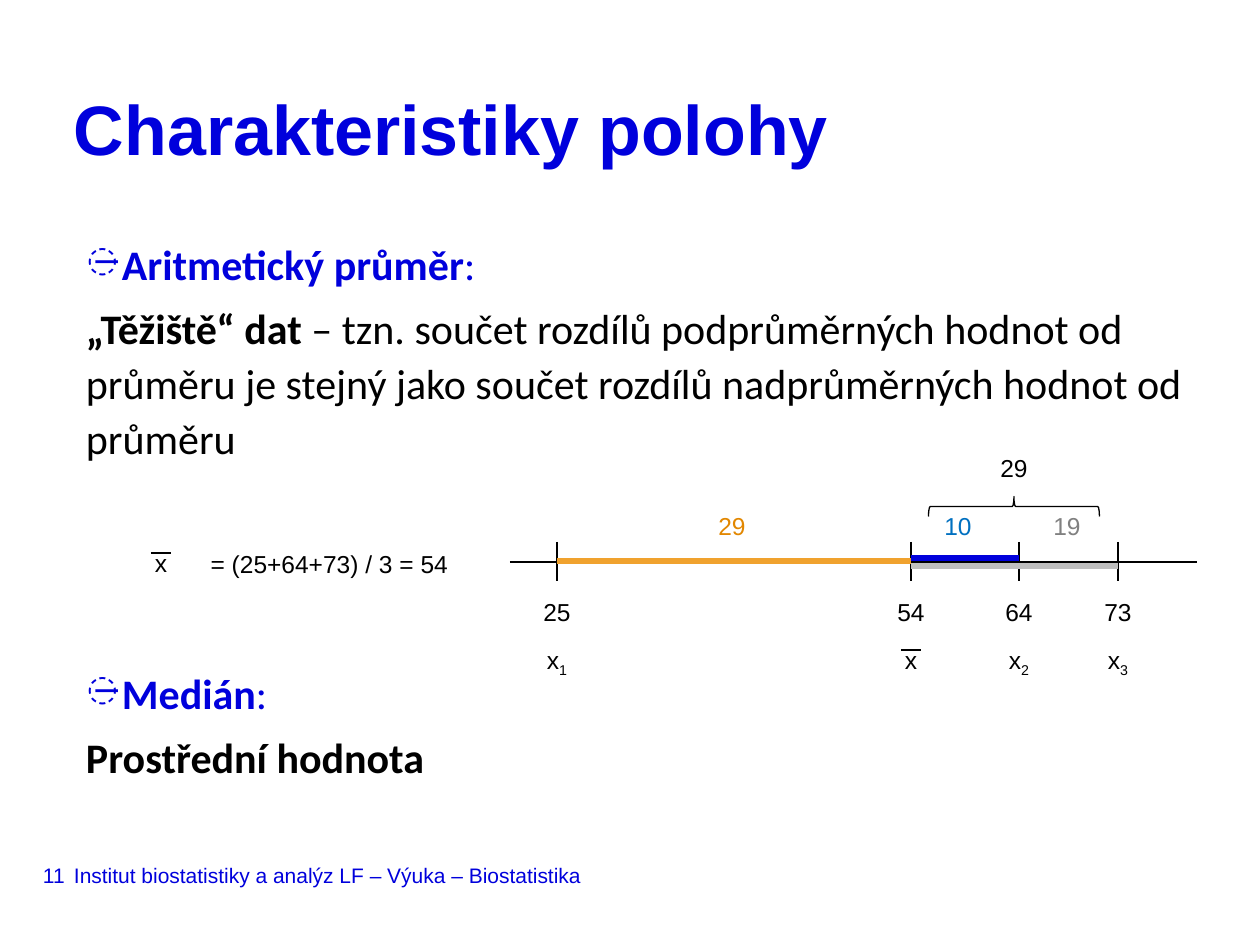
from dataclasses import dataclass

from lxml.etree import SubElement
from pptx import Presentation
from pptx.dml.color import RGBColor
from pptx.enum.shapes import MSO_CONNECTOR, MSO_SHAPE
from pptx.enum.text import MSO_ANCHOR, PP_ALIGN
from pptx.oxml.ns import qn
from pptx.util import Emu, Pt

PX = 914400 / 126
COLORS = {
    "blue": "0000DC", "black": "000000", "orange": "F0A22E", "dark_orange": "E28700",
    "gray": "808080", "light_gray": "BFBFBF", "sky": "0070C0",
}
AXIS_Y, TICK_TOP, TICK_BOTTOM = 562, 542, 581
VALUE_TOP, SYMBOL_TOP, DIFFERENCE_TOP = 591, 639, 505
LABEL_WIDTH, LABEL_HEIGHT = 60, 43


@dataclass
class Tick:
    x: int
    value: str
    index: str


@dataclass
class Label:
    text: str
    center: int
    top: int
    color: str = "black"
    subscript: str = ""
    width: int = LABEL_WIDTH


@dataclass
class Segment:
    start: int
    end: int
    y: int
    color: str


@dataclass
class Run:
    text: str
    color: str
    bold: bool = False


@dataclass
class Paragraph:
    runs: list[Run]
    bullet: bool = False


X1, MEAN, X2, X3 = (
    Tick(557, "25", "1"), Tick(911, "54", ""), Tick(1019, "64", "2"), Tick(1118, "73", "3"),
)
SEGMENTS = [
    Segment(X1.x, MEAN.x, 561, "orange"),
    Segment(MEAN.x, X3.x, 566, "light_gray"),
    Segment(MEAN.x, X2.x, 558, "blue"),
]
LABELS = [
    Label("29", 732, DIFFERENCE_TOP, "dark_orange"),
    Label("10", 958, DIFFERENCE_TOP, "sky"),
    Label("19", 1067, DIFFERENCE_TOP, "gray"),
    Label("29", 1014, 447),
    Label("= (25+64+73) / 3 = 54", 329, 543, width=263),
]
MEAN_TEXT = [
    Paragraph([Run("Aritmetický průměr", "blue", True), Run(":", "blue")], bullet=True),
    Paragraph([
        Run("„Těžiště“ dat ", "black", True),
        Run("– tzn. součet rozdílů podprůměrných hodnot od průměru je stejný "
            "jako součet rozdílů nadprůměrných hodnot od průměru", "black"),
    ]),
]
MEDIAN_TEXT = [
    Paragraph([Run("Medián", "blue", True), Run(":", "blue")], bullet=True),
    Paragraph([Run("Prostřední hodnota", "black", True)]),
]


def px(length: int) -> Emu:
    """Turn a length in px into EMU."""
    return Emu(round(length * PX))


def rgb(color: str) -> RGBColor:
    """Look up a named colour."""
    return RGBColor.from_string(COLORS[color])


def style(font, size: int, color: str, bold: bool = False, name: str = "Arial") -> None:
    """Set the look of a font."""
    font.name, font.size, font.bold = name, Pt(size), bold
    font.color.rgb = rgb(color)


def add_frame(slide, left: int, top: int, width: int, height: int, wrap: bool = True):
    """Add a text box without margins and return its text frame."""
    frame = slide.shapes.add_textbox(px(left), px(top), px(width), px(height)).text_frame
    frame.margin_left = frame.margin_top = frame.margin_right = frame.margin_bottom = 0
    frame.word_wrap = wrap
    return frame


def add_heading(slide) -> None:
    """Add the slide title."""
    frame = add_frame(slide, 74, 100, 1111, 62)
    frame.text = "Charakteristiky polohy"
    frame.paragraphs[0].line_spacing = Pt(40)
    style(frame.paragraphs[0].runs[0].font, 40, "blue", True)


def add_footer(slide, text: str, left: int, width: int, wrap: bool) -> None:
    """Add one part of the footer line."""
    frame = add_frame(slide, left, 858, width, 35, wrap)
    frame.vertical_anchor = MSO_ANCHOR.MIDDLE
    frame.text = text
    style(frame.paragraphs[0].runs[0].font, 12, "blue")


def indent(paragraph, bullet: bool) -> None:
    """Set the indents of a paragraph and its bullet."""
    properties = paragraph._p.get_or_add_pPr()
    properties.set("marL", str(px(48 if bullet else 12)))
    properties.set("indent", str(px(-35 if bullet else 0)))
    if bullet:
        color = SubElement(properties, qn("a:buClr"))
        SubElement(color, qn("a:srgbClr"), val=COLORS["blue"])
        SubElement(properties, qn("a:buSzPct"), val="85000")
        SubElement(properties, qn("a:buChar"), char="̶")


def add_section(slide, top: int, height: int, content: list[Paragraph]) -> None:
    """Add a bulleted term with its explanation."""
    frame = add_frame(slide, 74, top, 1111, height)
    for number, entry in enumerate(content):
        paragraph = frame.add_paragraph() if number else frame.paragraphs[0]
        indent(paragraph, entry.bullet)
        paragraph.line_spacing = 1.1
        paragraph.space_before = Pt(5 if number else 0)
        for part in entry.runs:
            run = paragraph.add_run()
            run.text = part.text
            style(run.font, 24, part.color, part.bold, "Calibri")


def add_line(slide, x1: int, y1: int, x2: int, y2: int,
             color: str = "black", weight: float = 1) -> None:
    """Add a straight line."""
    line = slide.shapes.add_connector(MSO_CONNECTOR.STRAIGHT, px(x1), px(y1), px(x2), px(y2))
    line.line.color.rgb = rgb(color)
    line.line.width = Pt(weight)
    SubElement(line._element.spPr, qn("a:effectLst"))


def add_label(slide, label: Label) -> None:
    """Add a centred label with an optional subscript."""
    frame = slide.shapes.add_textbox(
        px(label.center - label.width // 2), px(label.top), px(label.width), px(LABEL_HEIGHT)
    ).text_frame
    frame.word_wrap = True
    frame.text = label.text
    paragraph = frame.paragraphs[0]
    paragraph.alignment = PP_ALIGN.CENTER
    style(paragraph.runs[0].font, 14, label.color)
    if label.subscript:
        run = paragraph.add_run()
        run.text = label.subscript
        style(run.font, 14, label.color)
        run.font._element.set("baseline", "-25000")


def add_mean_symbol(slide, center: int, top: int) -> None:
    """Add an x with a bar over it."""
    add_label(slide, Label("x", center, top))
    add_line(slide, center - 10, top + 11, center + 10, top + 11, weight=0.75)


def add_brace(slide) -> None:
    """Add the brace over the two upper differences."""
    brace = slide.shapes.add_shape(MSO_SHAPE.RIGHT_BRACE, px(1004), px(421), px(20), px(171))
    brace.rotation = 270
    brace.shadow.inherit = False
    brace.fill.background()
    brace.line.color.rgb = rgb("black")
    brace.line.width = Pt(0.75)


def add_number_line(slide) -> None:
    """Draw the axis with its ticks, differences and labels."""
    add_line(slide, 510, AXIS_Y, 1197, AXIS_Y)
    for tick in (X1, MEAN, X2, X3):
        add_line(slide, tick.x, TICK_TOP, tick.x, TICK_BOTTOM)
        add_label(slide, Label(tick.value, tick.x, VALUE_TOP))
        if tick.index:
            add_label(slide, Label("x", tick.x, SYMBOL_TOP, subscript=tick.index))
    add_mean_symbol(slide, MEAN.x, SYMBOL_TOP)
    add_mean_symbol(slide, 161, 542)
    for segment in SEGMENTS:
        add_line(slide, segment.start, segment.y, segment.end, segment.y, segment.color, 3)
    for label in LABELS:
        add_label(slide, label)
    add_brace(slide)


def main() -> None:
    """Build and save the slide."""
    deck = Presentation()
    deck.slide_width, deck.slide_height = px(1260), px(945)
    slide = deck.slides.add_slide(deck.slide_layouts[6])
    add_footer(slide, "Institut biostatistiky a analýz LF – Výuka – Biostatistika", 74, 819, True)
    add_footer(slide, "11", 43, 26, False)
    add_heading(slide)
    add_section(slide, 233, 232, MEAN_TEXT)
    add_section(slide, 662, 120, MEDIAN_TEXT)
    add_number_line(slide)
    deck.save("out.pptx")


if __name__ == "__main__":
    main()
